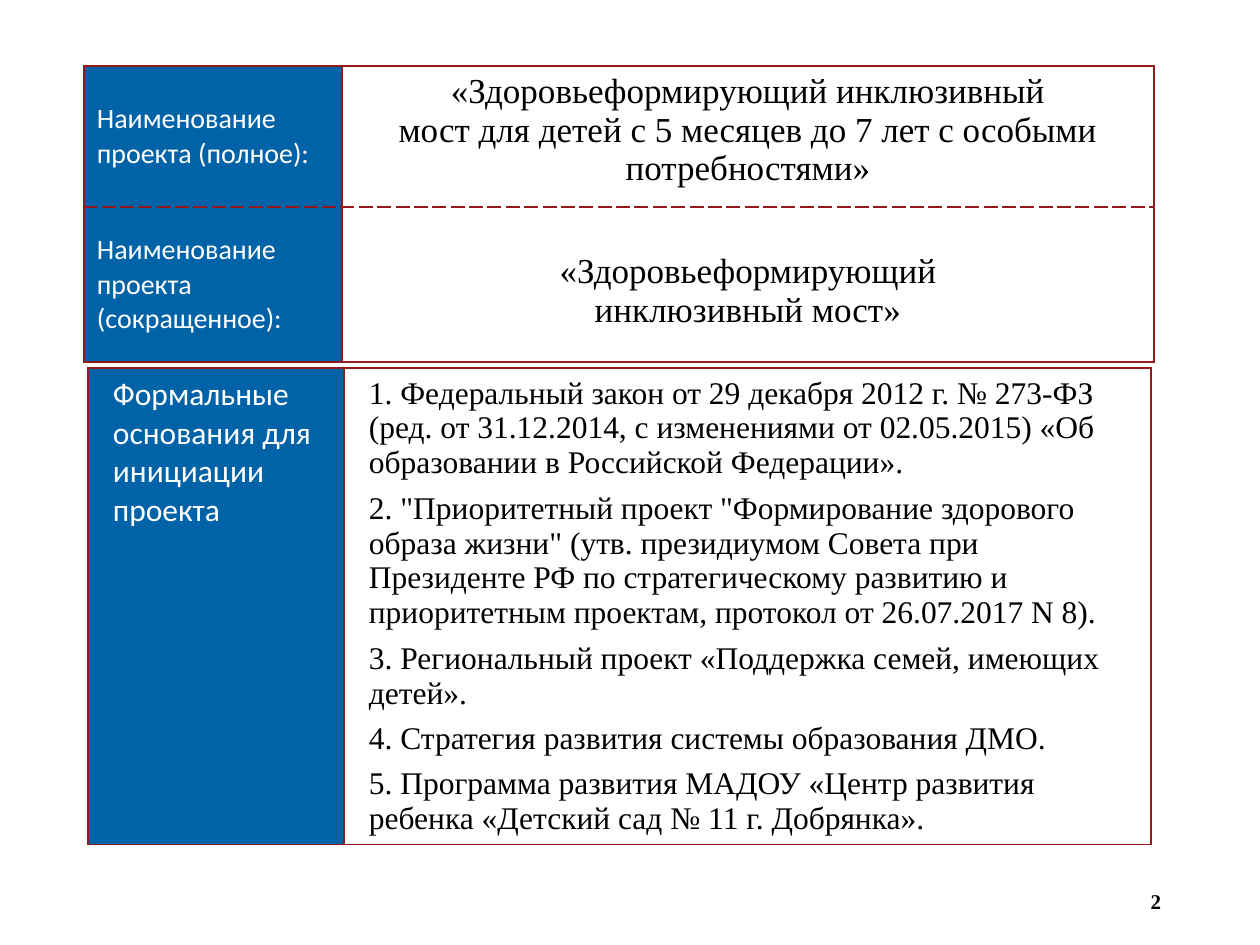
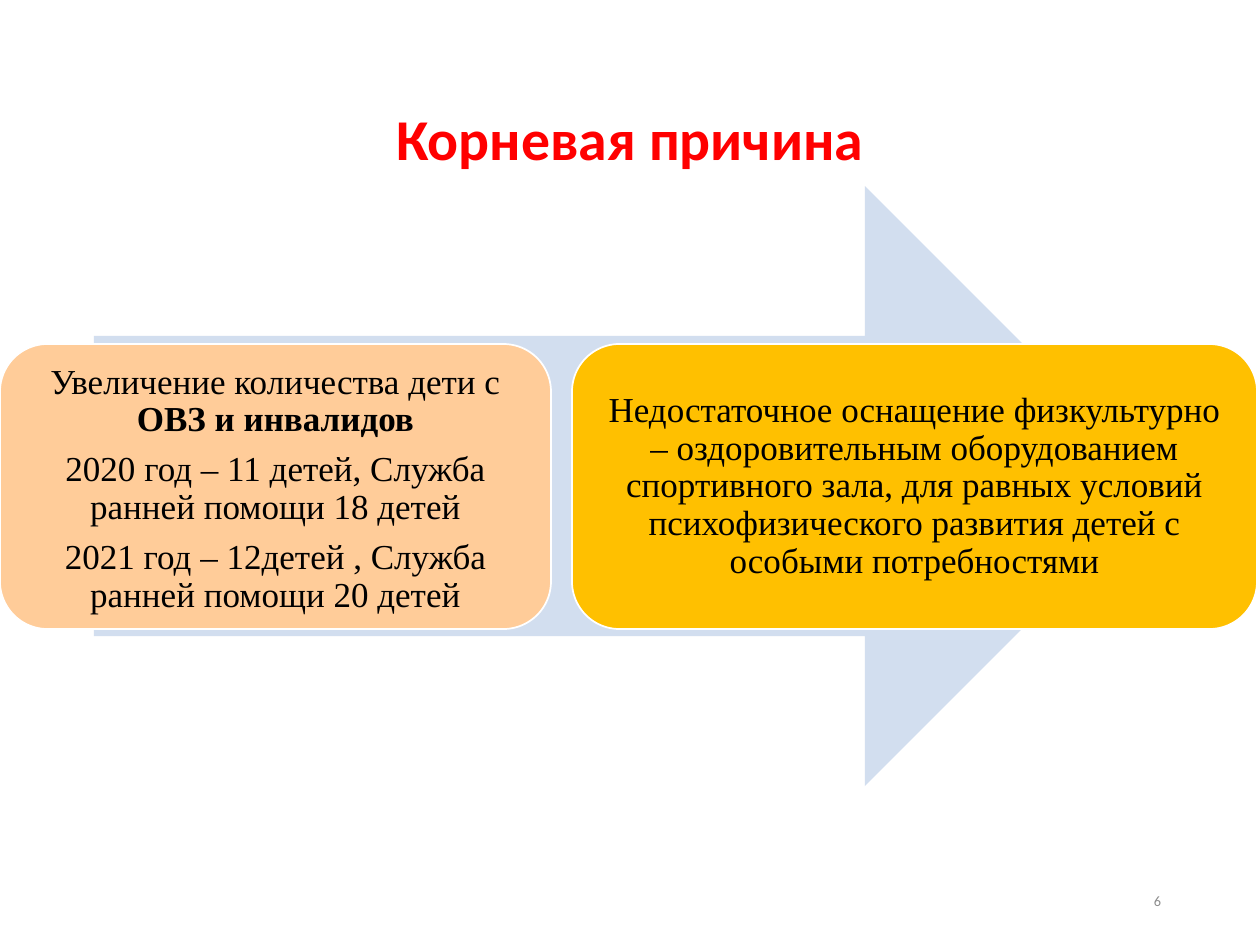
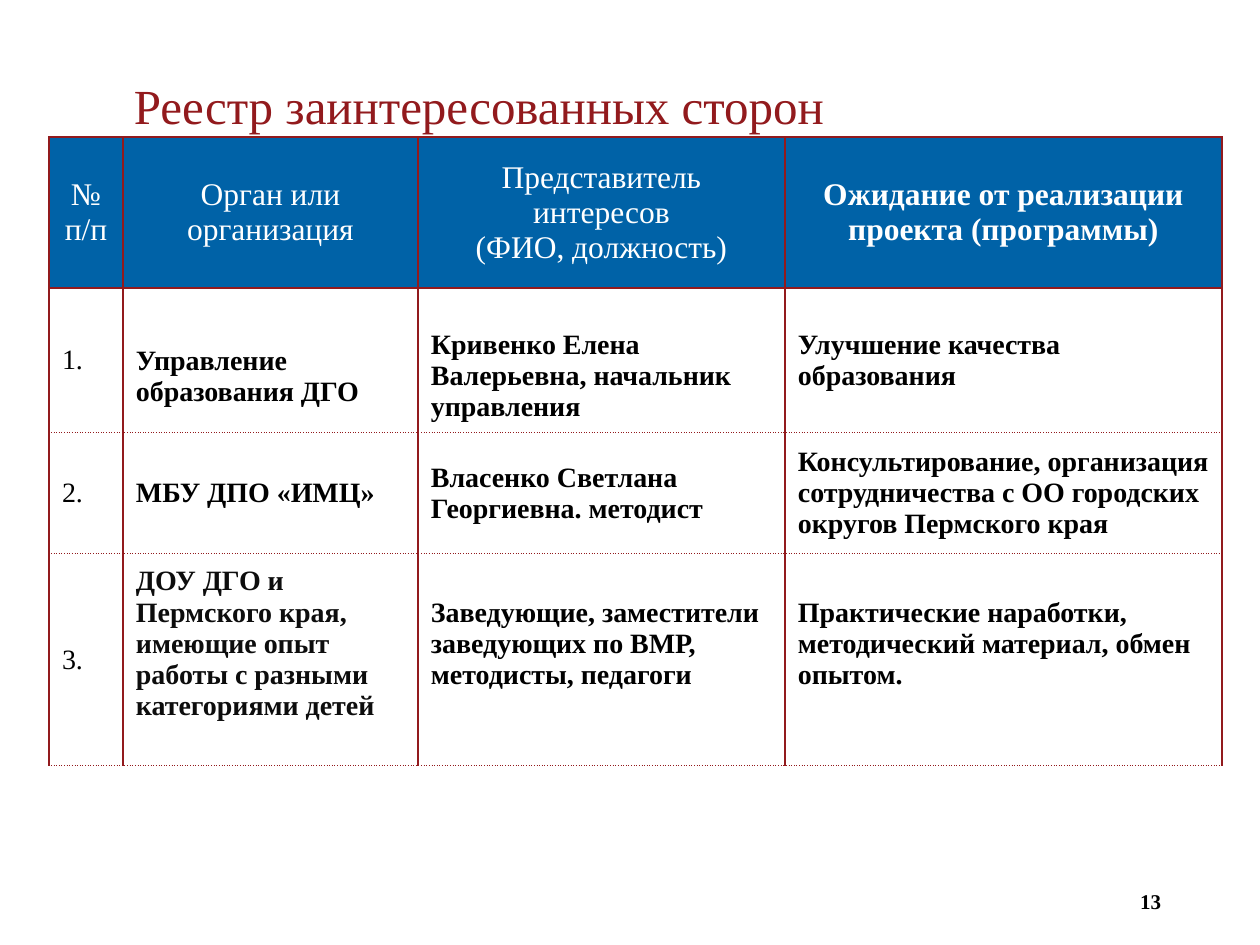
from collections import namedtuple

from lxml.etree import SubElement
from pptx import Presentation
from pptx.dml.color import RGBColor
from pptx.enum.shapes import MSO_SHAPE
from pptx.enum.text import MSO_ANCHOR, PP_ALIGN
from pptx.oxml.ns import qn
from pptx.util import Emu, Pt

EMU_PER_PX = 914400 / 126
Box = namedtuple("Box", "left top width height")

BLUE, MAROON, WHITE, BLACK = "0062A7", "921A1D", "FFFFFF", "000000"
SERIF, SANS = "Times New Roman", "Calibri"
PAGE = Box(0, 0, 1260, 945)


def px(length):
    return Emu(round(length * EMU_PER_PX))


def color(value):
    return RGBColor.from_string(value)


def font(size, name=SERIF, ink=BLACK, bold=False):
    return {"size": Pt(size), "name": name, "bold": bold, "ink": ink}


def layout(anchor=MSO_ANCHOR.MIDDLE, align=PP_ALIGN.LEFT, sides=13, top=6, bottom=6, gap=0, line=1.0):
    holder = {"vertical_anchor": anchor, "margin_left": px(sides), "margin_right": px(sides),
              "margin_top": px(top), "margin_bottom": px(bottom)}
    return {"holder": holder, "gap": gap, "paragraph": {"alignment": align, "line_spacing": line}}


def apply(target, values):
    for name, value in values.items():
        setattr(target, name, value)


def style_run(run, values):
    for name, value in values.items():
        if name == "ink":
            run.font.color.rgb = color(value)
        else:
            setattr(run.font, name, value)


def write_text(holder, frame, texts, letters, arrangement):
    apply(holder, arrangement["holder"])
    frame.word_wrap = True
    for index, text in enumerate(texts):
        paragraph = frame.add_paragraph() if index else frame.paragraphs[0]
        paragraph.text = text
        apply(paragraph, arrangement["paragraph"])
        if index and arrangement["gap"]:
            paragraph.space_before = Pt(arrangement["gap"])
        for run in paragraph.runs:
            style_run(run, letters)


def add_text(slide, box, text, letters, arrangement):
    frame = slide.shapes.add_textbox(*map(px, box)).text_frame
    write_text(frame, frame, [text], letters, arrangement)


def add_page_number(slide, page, number, letters):
    box = Box(page.left + 891, page.top + 876, 283, 50)
    add_text(slide, box, number, letters, layout(align=PP_ALIGN.RIGHT))


def add_border(cell, edge, dash):
    line = SubElement(cell._tc.get_or_add_tcPr(), qn(f"a:ln{edge}"), w=str(Pt(1)))
    fill = SubElement(line, qn("a:solidFill"))
    SubElement(fill, qn("a:srgbClr"), val=MAROON)
    SubElement(line, qn("a:prstDash"), val=dash)


def add_grid(slide, left, top, widths, heights, rules, rows):
    """Each cell is (fill, texts, font, layout); rules holds the dash of every horizontal line."""
    box = Box(left, top, sum(widths), sum(heights))
    table = slide.shapes.add_table(len(heights), len(widths), *map(px, box)).table
    apply(table, {"first_row": False, "horz_banding": False})
    for column, width in zip(table.columns, widths):
        column.width = px(width)
    for row_index, row in enumerate(rows):
        table.rows[row_index].height = px(heights[row_index])
        for column_index, (fill, texts, letters, arrangement) in enumerate(row):
            cell = table.cell(row_index, column_index)
            dashes = {"L": "solid", "R": "solid", "T": rules[row_index], "B": rules[row_index + 1]}
            for edge, dash in dashes.items():
                add_border(cell, edge, dash)
            cell.fill.solid()
            cell.fill.fore_color.rgb = color(fill)
            write_text(cell, cell.text_frame, texts, letters, arrangement)


def add_preset(slide, preset, box, fill, outline=None):
    shape = slide.shapes.add_shape(preset, *map(px, box))
    shape.shadow.inherit = False
    shape.fill.solid()
    shape.fill.fore_color.rgb = color(fill)
    if outline:
        shape.line.color.rgb = color(outline)
        shape.line.width = Pt(1)
    else:
        shape.line.fill.background()
    return shape


def build_passport(slide, page):
    label = font(16, SANS, WHITE)
    name = font(20)
    names = [
        [(BLUE, ["Наименование проекта (полное):"], label, layout()),
         (WHITE, ["«Здоровьеформирующий инклюзивный",
                  "мост для детей с 5 месяцев до 7 лет с особыми потребностями»"],
          name, layout(MSO_ANCHOR.TOP, PP_ALIGN.CENTER))],
        [(BLUE, ["Наименование проекта (сокращенное):"], label, layout()),
         (WHITE, ["«Здоровьеформирующий", "инклюзивный мост»"],
          name, layout(MSO_ANCHOR.TOP, PP_ALIGN.CENTER, top=45))],
    ]
    add_grid(slide, page.left + 84, page.top + 66, [258, 812], [141, 155],
             ["solid", "sysDash", "solid"], names)

    grounds = [
        "1. Федеральный закон от 29 декабря 2012 г. № 273-ФЗ (ред. от 31.12.2014, "
        "с изменениями от 02.05.2015) «Об образовании в Российской Федерации».",
        "2. \"Приоритетный проект \"Формирование здорового образа жизни\" (утв. президиумом "
        "Совета при Президенте РФ по стратегическому развитию и приоритетным проектам, "
        "протокол от 26.07.2017 N 8).",
        "3. Региональный проект «Поддержка семей, имеющих детей».",
        "4. Стратегия развития системы образования ДМО.",
        "5. Программа развития МАДОУ «Центр развития ребенка «Детский сад № 11 г. Добрянка».",
    ]
    indented = layout(MSO_ANCHOR.TOP, sides=25, top=8, bottom=8, gap=6)
    add_grid(slide, page.left + 88, page.top + 368, [256, 807], [476], ["solid", "solid"], [[
        (BLUE, ["Формальные основания для инициации проекта"], font(18, SANS, WHITE), indented),
        (WHITE, grounds, font(18), indented),
    ]])
    add_page_number(slide, page, "2", font(12, bold=True))


def build_root_cause(slide, page):
    add_text(slide, Box(page.left + 87, page.top + 50, 1086, 183), "Корневая причина",
             font(33, SANS, "FF0000", True), layout(align=PP_ALIGN.CENTER, line=0.9))
    add_preset(slide, MSO_SHAPE.RIGHT_ARROW, Box(page.left + 94, page.top + 186, 1071, 600), "D2DEEF")
    growth = ["Увеличение количества дети с",
              "2020 год – 11 детей, Служба ранней помощи 18 детей",
              "2021 год – 12детей , Служба ранней помощи 20 детей"]
    shortage = ["Недостаточное оснащение физкультурно – оздоровительным оборудованием спортивного "
                "зала, для равных условий психофизического развития детей с особыми потребностями"]
    frames = []
    for left, width, fill, texts, top in [(0, 551, "FFCC99", growth, 19),
                                          (572, 685, "FFC000", shortage, 13)]:
        box = Box(page.left + left, page.top + 344, width, 285)
        frame = add_preset(slide, MSO_SHAPE.ROUNDED_RECTANGLE, box, fill, WHITE).text_frame
        write_text(frame, frame, texts, font(20),
                   layout(align=PP_ALIGN.CENTER, top=top, bottom=13, gap=7, line=0.9))
        frames.append(frame)
    emphasis = frames[0].paragraphs[0].add_run()
    emphasis.text = " ОВЗ и инвалидов"
    style_run(emphasis, font(20, bold=True))
    add_page_number(slide, page, "6", font(8.2, SANS, "8C8C8C"))


def build_stakeholders(slide, page):
    add_text(slide, Box(page.left + 121, page.top + 14, 935, 127), "Реестр заинтересованных сторон",
             font(28, ink=MAROON), layout(MSO_ANCHOR.BOTTOM, line=0.9))
    headings = [["№", "п/п"], ["Орган или организация"],
                ["Представитель интересов\v(ФИО, должность)"],
                ["Ожидание от реализации проекта (программы)"]]
    last = len(headings) - 1
    rows = [[(BLUE, texts, font(18, ink=WHITE, bold=index == last), layout(align=PP_ALIGN.CENTER))
             for index, texts in enumerate(headings)]]
    middle, lowered, raised = layout(), layout(top=38), layout(bottom=38)
    parties = [
        (BLACK, [("Управление образования ДГО", lowered),
                 ("Кривенко Елена Валерьевна, начальник управления", lowered),
                 ("Улучшение качества образования", middle)]),
        (BLACK, [("МБУ ДПО «ИМЦ»", middle),
                 ("Власенко Светлана Георгиевна. методист", middle),
                 ("Консультирование, организация сотрудничества с ОО городских округов "
                  "Пермского края", middle)]),
        ("0D0D0D", [("ДОУ ДГО и Пермского края, имеющие опыт работы с разными категориями детей",
                     raised),
                    ("Заведующие, заместители заведующих по ВМР, методисты, педагоги", raised),
                    ("Практические наработки, методический материал, обмен опытом.", raised)]),
    ]
    for number, (party_ink, entries) in enumerate(parties, 1):
        inks = [party_ink, BLACK, BLACK]
        rows.append([(WHITE, [f"{number}."], font(16), middle)]
                    + [(WHITE, [text], font(16, ink=ink, bold=True), arrangement)
                       for ink, (text, arrangement) in zip(inks, entries)])
    add_grid(slide, page.left + 49, page.top + 137, [74, 295, 367, 437], [151, 137, 121, 199],
             ["solid", "solid", "sysDot", "sysDot", "sysDot"], rows)
    add_page_number(slide, page, "13", font(12, bold=True))


def main():
    presentation = Presentation()
    apply(presentation, {"slide_width": px(PAGE.width), "slide_height": px(PAGE.height)})
    for build in (build_passport, build_root_cause, build_stakeholders):
        build(presentation.slides.add_slide(presentation.slide_layouts[6]), PAGE)
    presentation.save("out.pptx")


if __name__ == "__main__":
    main()
